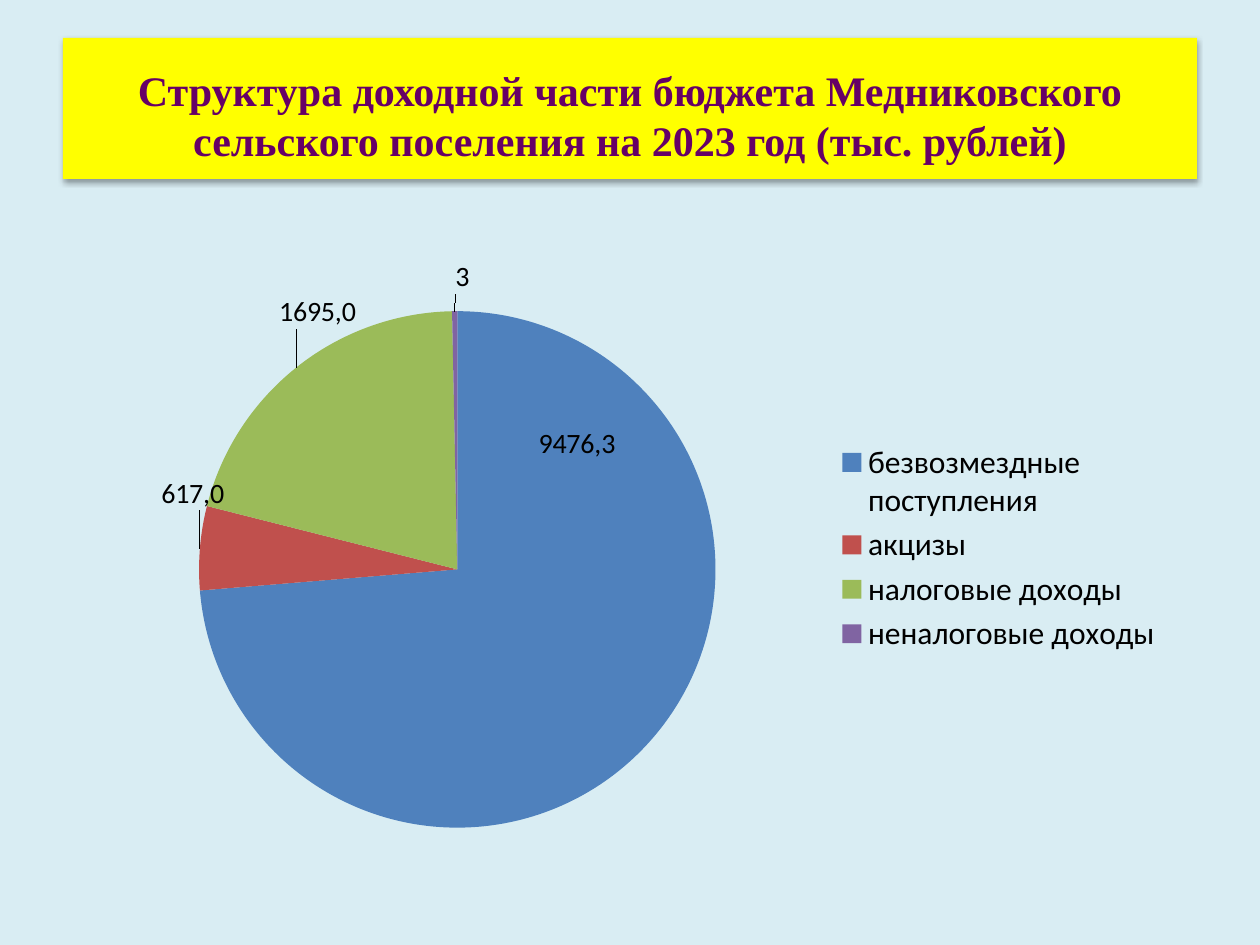
from math import cos, pi, sin

from lxml.etree import SubElement
from pptx import Presentation
from pptx.chart.data import CategoryChartData
from pptx.dml.color import RGBColor
from pptx.enum.chart import XL_CHART_TYPE as ChartType, XL_LEGEND_POSITION as LegendSide
from pptx.enum.chart import XL_LABEL_POSITION as LabelSpot
from pptx.enum.shapes import MSO_SHAPE as Preset
from pptx.enum.text import MSO_ANCHOR as Anchor, PP_ALIGN as Align
from pptx.oxml import parse_xml
from pptx.oxml.ns import nsdecls, qn
from pptx.util import Inches, Pt

PALE_BLUE = RGBColor(0xD9, 0xED, 0xF3)
YELLOW = RGBColor(0xFF, 0xFF, 0x00)
PURPLE = RGBColor(0x66, 0x00, 0x66)
BLACK = RGBColor(0x00, 0x00, 0x00)

# Category, value, label, slice colour, label centre on the page in inches
INCOME = [
    ("безвозмездные поступления", 7215.2, "9476,3", RGBColor(0x4F, 0x81, 0xBD), (4.58, 3.53)),
    ("акцизы ", 514, "617,0", RGBColor(0xC0, 0x50, 0x4D), (1.53, 3.92)),
    ("налоговые доходы", 2030, "1695,0", RGBColor(0x9B, 0xBB, 0x59), (2.52, 2.48)),
    ("неналоговые доходы", 31.5, "3", RGBColor(0x80, 0x64, 0xA2), (3.67, 2.2)),
]
CHART_BOX = (0.5, 2, 8.83, 4.7)
PIE_CENTRE, PIE_RADIUS = (3.63, 4.52), 2.05

SHADOW = (
    f'<a:effectLst {nsdecls("a")}><a:outerShdw blurRad="39370" dist="22860" dir="5400000" '
    'rotWithShape="0"><a:srgbClr val="000000"><a:alpha val="35000"/></a:srgbClr>'
    '</a:outerShdw></a:effectLst>'
)


class Page:
    """The slide with its fonts and colours."""

    title_font, chart_font = "Times New Roman", "Calibri"

    def __init__(self, deck):
        self.slide = deck.slides.add_slide(deck.slide_layouts[6])
        fill = self.slide.background.fill
        fill.solid()
        fill.fore_color.rgb = PALE_BLUE

    def banner(self, text, left, top, width, height):
        box = self.slide.shapes.add_shape(
            Preset.RECTANGLE, Inches(left), Inches(top), Inches(width), Inches(height))
        box.fill.solid()
        box.fill.fore_color.rgb = YELLOW
        box.line.fill.background()
        box._element.spPr.append(parse_xml(SHADOW))
        frame = box.text_frame
        frame.word_wrap = True
        frame.vertical_anchor = Anchor.MIDDLE
        frame.margin_top = Inches(0.15)
        para = frame.paragraphs[0]
        para.text = text
        para.alignment = Align.CENTER
        self.style(para.font, self.title_font, 24, PURPLE)
        para.font.bold = True

    def pie(self, rows):
        data = CategoryChartData()
        data.categories = [row[0] for row in rows]
        data.add_series("Series 1", [row[1] for row in rows])
        left, top, width, height = CHART_BOX
        chart = self.slide.shapes.add_chart(
            ChartType.PIE, *(Inches(size) for size in CHART_BOX), data).chart
        self.style(chart.font, self.chart_font, 10, BLACK)
        chart.has_title = False
        chart.has_legend = True
        chart.legend.position = LegendSide.RIGHT
        chart.legend.include_in_layout = False
        self.style(chart.legend.font, self.chart_font, 18, BLACK)

        # Fixed place for the pie
        plot_area = chart._chartSpace.chart.plotArea
        for old in plot_area.findall(qn("c:layout")):
            plot_area.remove(old)
        centre_x, centre_y = PIE_CENTRE
        plot_area.insert(0, self.layout(
            layoutTarget="inner", xMode="edge", yMode="edge",
            x=(centre_x - PIE_RADIUS - left) / width,
            y=(centre_y - PIE_RADIUS - top) / height,
            w=2 * PIE_RADIUS / width, h=2 * PIE_RADIUS / height))

        # Slices, each label moved from the middle of its slice
        plot = chart.plots[0]
        plot.vary_by_categories = True
        total, passed = sum(row[1] for row in rows), 0
        for point, (_, value, label, color, spot) in zip(plot.series[0].points, rows):
            point.format.fill.solid()
            point.format.fill.fore_color.rgb = color
            angle = 2 * pi * (passed + value / 2) / total
            passed += value
            self.label(point.data_label, label, (
                (spot[0] - centre_x - PIE_RADIUS / 2 * sin(angle)) / width,
                (spot[1] - centre_y + PIE_RADIUS / 2 * cos(angle)) / height))
        labels = plot.series[0].data_labels
        labels.show_value = True
        self.style(labels.font, self.chart_font, 16, BLACK)
        leader = labels._element.find(qn("c:showLeaderLines"))
        if leader is None:
            leader = SubElement(labels._element, qn("c:showLeaderLines"))
        leader.set("val", "1")

    def label(self, data_label, text, offset):
        para = data_label.text_frame.paragraphs[0]
        span = para.add_run()
        span.text = text
        self.style(span.font, self.chart_font, 16, BLACK)
        data_label.position = LabelSpot.CENTER
        element = data_label._dLbl
        element.insert(1, self.layout(x=offset[0], y=offset[1]))

    @staticmethod
    def layout(**settings):
        items = "".join(f'<c:{key} val="{value}"/>' for key, value in settings.items())
        return parse_xml(f'<c:layout {nsdecls("c")}><c:manualLayout>{items}'
                         '</c:manualLayout></c:layout>')

    @staticmethod
    def style(font, name, size, color):
        font.name = name
        font.size = Pt(size)
        font.color.rgb = color


def main():
    deck = Presentation()
    deck.slide_width, deck.slide_height = Inches(10), Inches(7.5)
    page = Page(deck)
    page.banner("Структура доходной части бюджета Медниковского сельского поселения "
                "на 2023 год (тыс. рублей)", 0.5, 0.3, 9, 1.12)
    page.pie(INCOME)
    deck.save("out.pptx")


if __name__ == "__main__":
    main()
